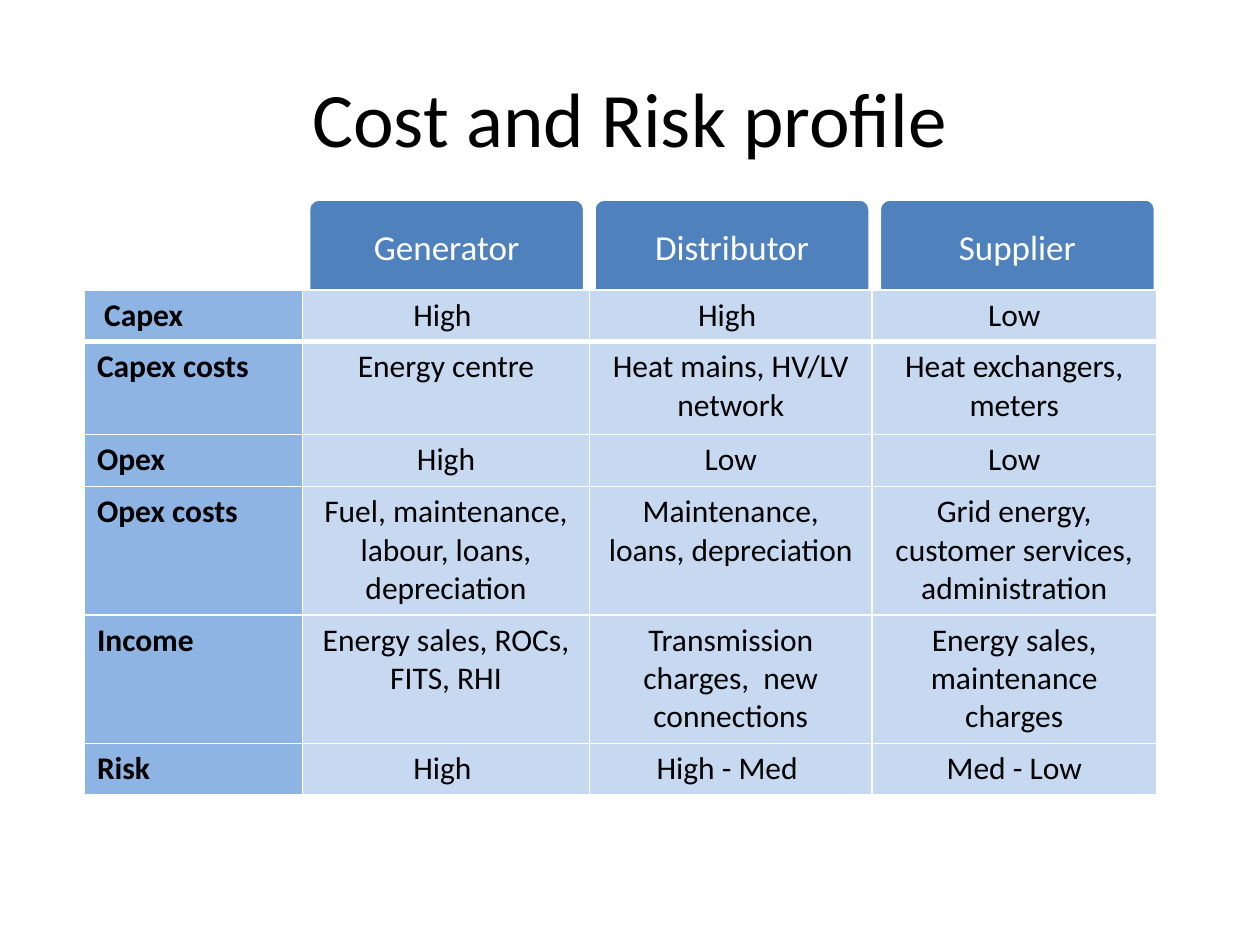
from dataclasses import dataclass

from lxml.etree import SubElement
from pptx import Presentation
from pptx.dml.color import RGBColor
from pptx.enum.shapes import MSO_SHAPE as Kind
from pptx.enum.text import MSO_ANCHOR as Anchor, PP_ALIGN as Align
from pptx.oxml.ns import qn
from pptx.util import Inches, Pt

WHITE = RGBColor(0xFF, 0xFF, 0xFF)
BLACK = RGBColor(0, 0, 0)
BLUE = RGBColor(0x4F, 0x81, 0xBD)
MID = RGBColor(0x8E, 0xB4, 0xE3)
PALE = RGBColor(0xC6, 0xD9, 0xF1)
FONT = "Calibri"
WIDE, HIGH = 10, 7.5
LEFT, TOP = 0.67, 2.3
COLS = (1.73, 2.28, 2.24, 2.26)
LINE, PAIR, TRIO = 0.41, 0.74, 1.02
HEAD, STEP = 2.45, 2.265


@dataclass(frozen=True)
class Row:
    name: str
    cells: tuple[str, str, str]
    tall: float = LINE
    base: float = 1


HEADS = ("Generator", "Distributor", "Supplier")
ROWS = (
    Row(" Capex", ("High ", "High ", "Low"), base=3),
    Row("Capex costs", ("Energy centre", "Heat mains, HV/LV network",
                        "Heat exchangers, meters"), PAIR),
    Row("Opex", ("High", "Low", "Low")),
    Row("Opex costs", ("Fuel, maintenance, labour, loans, depreciation",
                       "Maintenance, loans, depreciation",
                       "Grid energy, customer services, administration"), TRIO),
    Row("Income", ("Energy sales, ROCs, FITS, RHI",
                   "Transmission charges,  new connections",
                   "Energy sales, maintenance charges"), TRIO),
    Row("Risk", ("High ", "High - Med ", "Med - Low")),
)


def write(frame, text: str, size: float, color: RGBColor,
          align=Align.CENTER, bold: bool = False):
    frame.word_wrap = True
    para = frame.paragraphs[0]
    para.alignment = align
    run = para.add_run()
    run.text = text
    font = run.font
    font.name, font.size, font.bold = FONT, Pt(size), bold
    font.color.rgb = color
    return para


def title(slide, text: str) -> None:
    box = slide.shapes.add_textbox(Inches(WIDE * 0.05), Inches(HIGH * 0.04),
                                   Inches(WIDE * 0.9), Inches(HIGH / 6))
    box.text_frame.vertical_anchor = Anchor.MIDDLE
    write(box.text_frame, text, 44, BLACK)


def header(slide, col: int, text: str) -> None:
    tab = slide.shapes.add_shape(Kind.ROUNDED_RECTANGLE,
                                 Inches(HEAD + col * STEP), Inches(1.58),
                                 Inches(2.19), Inches(0.79))
    tab.adjustments[0] = 0.1
    tab.shadow.inherit = False
    tab.fill.solid()
    tab.fill.fore_color.rgb = BLUE
    tab.line.color.rgb = WHITE
    tab.line.width = Pt(2)
    frame = tab.text_frame
    frame.vertical_anchor = Anchor.MIDDLE
    frame.margin_left = frame.margin_right = Inches(0.08)
    frame.margin_top = frame.margin_bottom = Inches(0.08)
    para = write(frame, text, 20, WHITE)
    para.line_spacing = 0.9


def border(cell, top: float, base: float) -> None:
    props = cell._tc.get_or_add_tcPr()
    sides = (("a:lnL", 1), ("a:lnR", 1), ("a:lnT", top), ("a:lnB", base))
    for spot, (tag, width) in enumerate(sides):
        line = SubElement(props, qn(tag), w=str(Pt(width)))
        fill = SubElement(line, qn("a:solidFill"))
        SubElement(fill, qn("a:srgbClr"), val=str(WHITE))
        props.insert(spot, line)


def grid(slide, rows: tuple[Row, ...]) -> None:
    frame = slide.shapes.add_table(
        len(rows), len(COLS), Inches(LEFT), Inches(TOP),
        Inches(sum(COLS)), Inches(sum(row.tall for row in rows)))
    table = frame.table
    table.first_row = table.horz_banding = False
    for col, width in zip(table.columns, COLS):
        col.width = Inches(width)
    top = 1
    for y, row in enumerate(rows):
        table.rows[y].height = Inches(row.tall)
        for x, text in enumerate((row.name, *row.cells)):
            cell = table.cell(y, x)
            lead = x == 0
            cell.fill.solid()
            cell.fill.fore_color.rgb = MID if lead else PALE
            write(cell.text_frame, text, 18, BLACK,
                  Align.LEFT if lead else Align.CENTER, lead)
            border(cell, top, row.base)
        top = row.base


def main() -> None:
    deck = Presentation()
    deck.slide_width, deck.slide_height = Inches(WIDE), Inches(HIGH)
    slide = deck.slides.add_slide(deck.slide_layouts[6])
    title(slide, "Cost and Risk profile")
    for col, text in enumerate(HEADS):
        header(slide, col, text)
    grid(slide, ROWS)
    deck.save("out.pptx")


if __name__ == "__main__":
    main()
